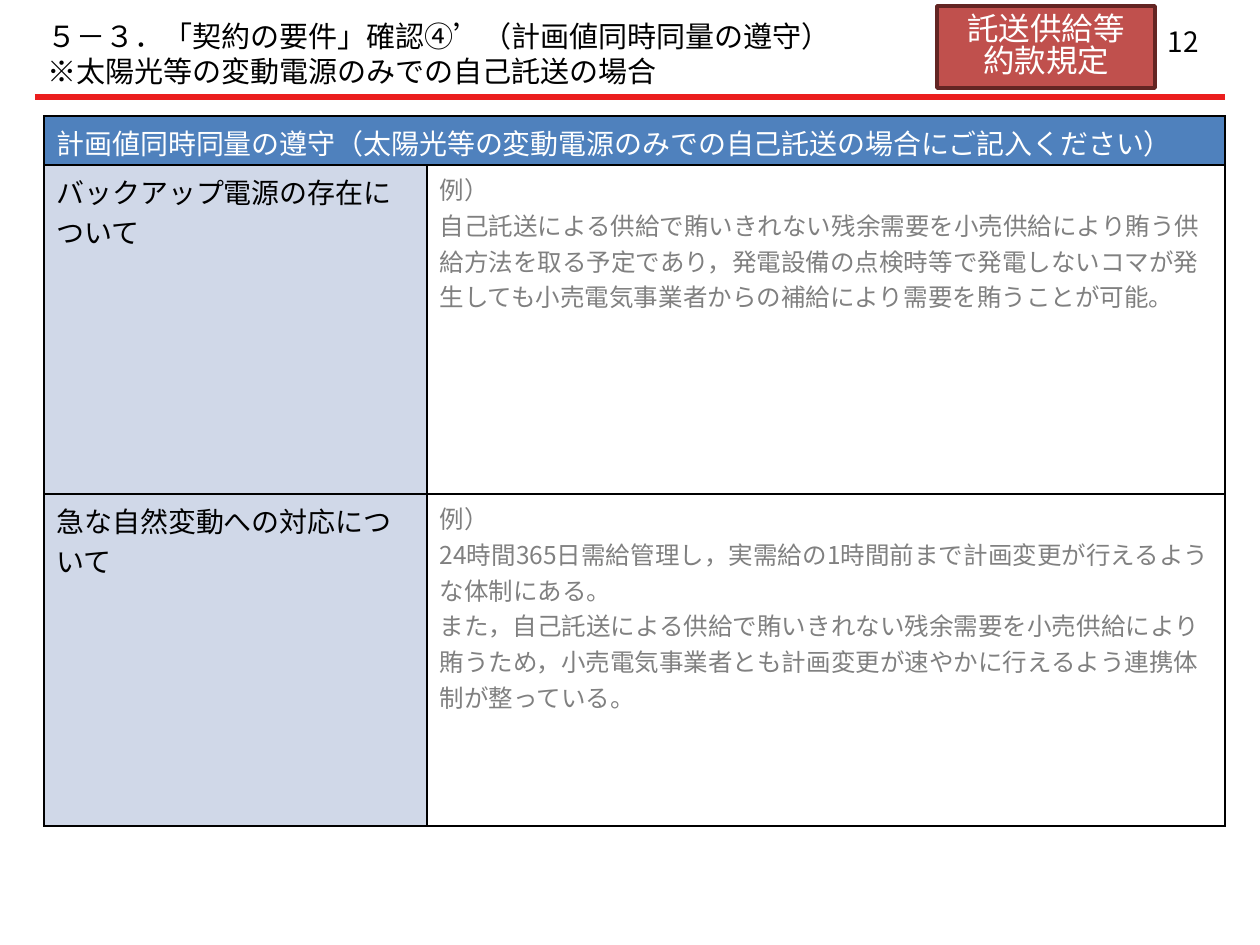
from pptx import Presentation
from pptx import util as u
from pptx.dml.color import RGBColor
from pptx.enum import shapes, text
from pptx.oxml import ns, xmlchemy as xc

SCALE = 914400 / 126
FONT = "Noto Sans CJK JP"
BLACK = RGBColor(0x00, 0x00, 0x00)
WHITE = RGBColor(0xFF, 0xFF, 0xFF)
GREY = RGBColor(0x80, 0x80, 0x80)
RED = RGBColor(0xEB, 0x1E, 0x1E)
BLUE = RGBColor(0x4F, 0x81, 0xBD)
PALE = RGBColor(0xD0, 0xD8, 0xE8)
BRICK = RGBColor(0xC0, 0x50, 0x4D)
MAROON = RGBColor(0x63, 0x25, 0x23)

HEAD = "計画値同時同量の遵守（太陽光等の変動電源のみでの自己託送の場合にご記入ください）"
ROWS = [
    ("バックアップ電源の存在について", [
        "例）",
        "自己託送による供給で賄いきれない残余需要を小売供給により賄う供給方法を取る予定であり，"
        "発電設備の点検時等で発電しないコマが発生しても小売電気事業者からの補給により需要を賄うことが可能。",
    ]),
    ("急な自然変動への対応について", [
        "例）",
        "24時間365日需給管理し，実需給の1時間前まで計画変更が行えるような体制にある。",
        "また，自己託送による供給で賄いきれない残余需要を小売供給により賄うため，"
        "小売電気事業者とも計画変更が速やかに行えるよう連携体制が整っている。",
    ]),
]


def px(n):
    return u.Emu(round(n * SCALE))


def write(frame, lines, size=16, color=BLACK, align=text.PP_ALIGN.LEFT,
          anchor=text.MSO_ANCHOR.TOP, pitch=None, gap=0):
    frame.word_wrap = True
    frame.vertical_anchor = anchor
    for i, line in enumerate(lines):
        para = frame.add_paragraph() if i else frame.paragraphs[0]
        para.alignment = align
        para.line_spacing = pitch
        para.space_before = u.Pt(gap if i else 0)
        run = para.add_run()
        run.text = line
        font = run.font
        font.name, font.size, font.bold = FONT, u.Pt(size), False
        font.color.rgb = color
        east = xc.OxmlElement("a:ea")
        east.set("typeface", FONT)
        font._element.find(ns.qn("a:latin")).addnext(east)


def edge(cell):
    props = cell._tc.get_or_add_tcPr()
    for i, side in enumerate("LRTB"):
        line = xc.OxmlElement(f"a:ln{side}")
        line.set("w", str(u.Pt(1)))
        fill = xc.OxmlElement("a:solidFill")
        tint = xc.OxmlElement("a:srgbClr")
        tint.set("val", str(BLACK))
        fill.append(tint)
        line.append(fill)
        props.insert(i, line)


def header(slide, x, y, w, h):
    title = slide.shapes.title
    title.left, title.top, title.width, title.height = map(px, (x, y + 10, 1047, 88))
    title.text_frame.auto_size = text.MSO_AUTO_SIZE.NONE
    write(title.text_frame, ["５－３．「契約の要件」確認④’（計画値同時同量の遵守）",
                             "※太陽光等の変動電源のみでの自己託送の場合"],
          size=16.6, pitch=0.9, gap=2)

    rule = slide.shapes.add_connector(shapes.MSO_CONNECTOR.STRAIGHT,
                                      px(x), px(y + h), px(x + w), px(y + h))
    rule.line.color.rgb = RED
    rule.line.width = u.Pt(3)
    rule._element.spPr.append(xc.OxmlElement("a:effectLst"))

    page = slide.shapes.add_textbox(px(x + 882), px(y + 10), px(294), px(50))
    write(page.text_frame, ["12"], align=text.PP_ALIGN.RIGHT,
          anchor=text.MSO_ANCHOR.MIDDLE)

    badge = slide.shapes.add_shape(shapes.MSO_SHAPE.RECTANGLE,
                                   px(x + 902), px(y), px(218), px(82))
    badge.shadow.inherit = False
    badge.fill.solid()
    badge.fill.fore_color.rgb = BRICK
    badge.line.color.rgb = MAROON
    badge.line.width = u.Pt(2)
    write(badge.text_frame, ["託送供給等", "約款規定"], size=18, color=WHITE,
          align=text.PP_ALIGN.CENTER, anchor=text.MSO_ANCHOR.MIDDLE, pitch=0.84)


def form(slide, x, y, w, h):
    grid = slide.shapes.add_table(3, 2, px(x), px(y), px(w), px(h)).table
    grid.first_row = grid.horz_banding = False
    for col, size in zip(grid.columns, (383, w - 383)):
        col.width = px(size)
    for row, size in zip(grid.rows, (49, 329, h - 378)):
        row.height = px(size)
    grid.cell(0, 0).merge(grid.cell(0, 1))

    write(grid.cell(0, 0).text_frame, [HEAD], color=WHITE)
    for i, (label, notes) in enumerate(ROWS, 1):
        write(grid.cell(i, 0).text_frame, [label])
        write(grid.cell(i, 1).text_frame, notes, size=14, color=GREY)

    fills = [(BLUE, BLUE), (PALE, WHITE), (PALE, WHITE)]
    for i, pair in enumerate(fills):
        for j, color in enumerate(pair):
            cell = grid.cell(i, j)
            cell.fill.solid()
            cell.fill.fore_color.rgb = color
            edge(cell)


def main():
    deck = Presentation()
    deck.slide_width, deck.slide_height = u.Inches(10), u.Inches(7.5)
    slide = deck.slides.add_slide(deck.slide_layouts[5])
    header(slide, 35, 6, 1190, 91)
    form(slide, 44, 116, 1181, 710)
    deck.save("out.pptx")


if __name__ == "__main__":
    main()
